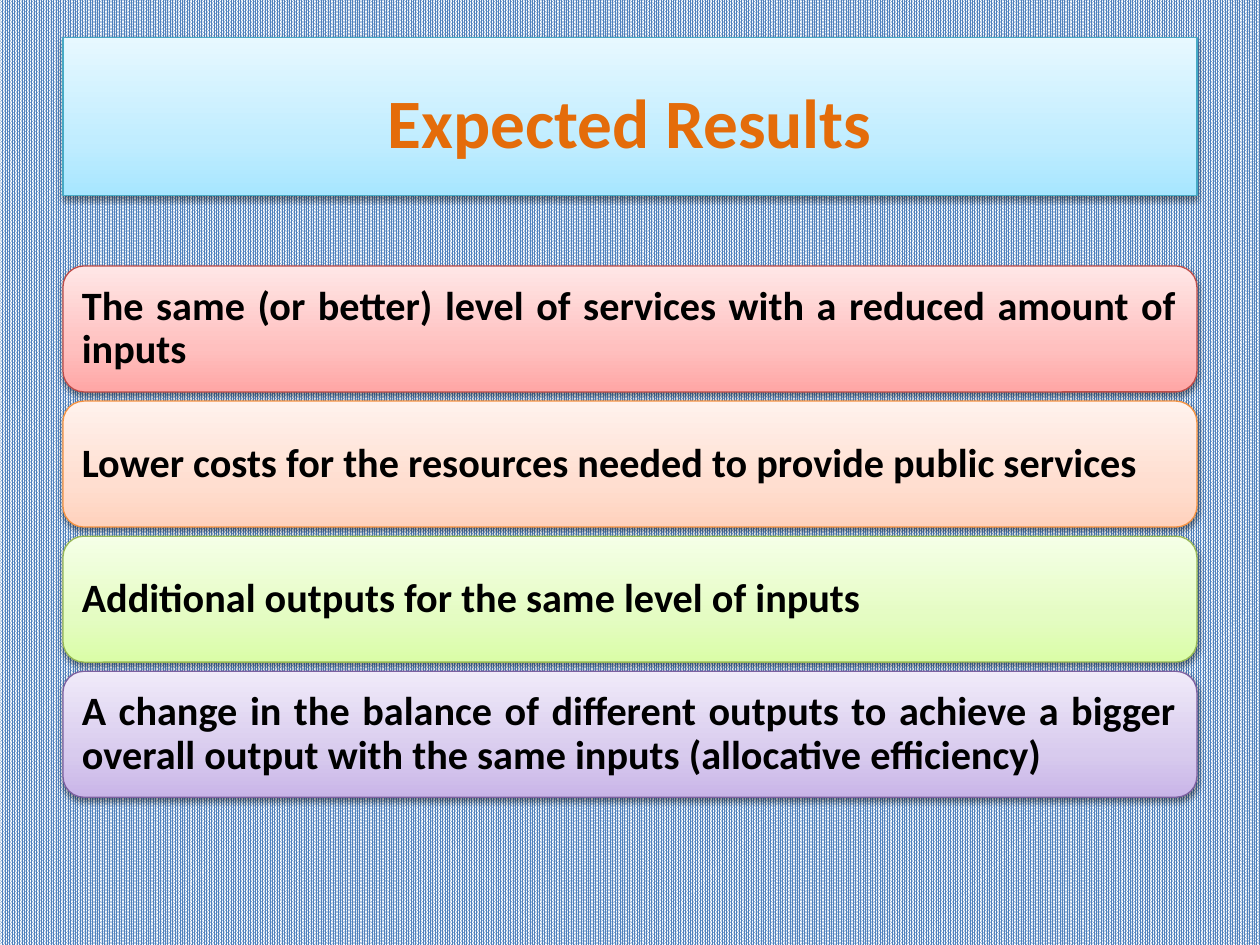
from copy import deepcopy

from lxml import etree
from pptx import Presentation
from pptx.dml.color import RGBColor
from pptx.enum import dml, shapes, text
from pptx.oxml.ns import qn
from pptx.util import Pt

rgb = RGBColor.from_string


def panel(kind, top, height, stops, edge):
    """Add a full-width panel with an upward gradient and a soft shadow."""
    box = slide.shapes.add_shape(kind, Pt(36), Pt(top), Pt(648), Pt(height))
    box.fill.gradient()
    box.fill.gradient_angle = 90
    ramp = box._element.spPr.find(".//" + qn("a:gsLst"))
    ramp.append(deepcopy(ramp[0]))
    for stop, place, color in zip(box.fill.gradient_stops, (0, 0.35, 1), stops):
        stop.position = place
        stop.color.rgb = rgb(color)
    box.line.color.rgb = rgb(edge)
    box.line.width = Pt(0.75)

    box.shadow.inherit = False
    glow = box._element.spPr.find(qn("a:effectLst"))
    drop = etree.SubElement(glow, qn("a:outerShdw"), blurRad=str(Pt(3.1)),
                            dist=str(Pt(1.6)), dir="5400000", rotWithShape="0")
    tint = etree.SubElement(drop, qn("a:srgbClr"), val="000000")
    etree.SubElement(tint, qn("a:alpha"), val="38000")
    return box


def write(box, words, size, color, align):
    frame = box.text_frame
    frame.word_wrap = True
    frame.vertical_anchor = text.MSO_ANCHOR.MIDDLE
    para = frame.paragraphs[0]
    para.alignment = align
    run = para.add_run()
    run.text = words
    run.font.name = "Calibri"
    run.font.size = Pt(size)
    run.font.bold = True
    run.font.color.rgb = rgb(color)
    return frame


deck = Presentation()
deck.slide_width, deck.slide_height = Pt(720), Pt(540)
slide = deck.slides.add_slide(deck.slide_layouts[6])

back = slide.background.fill
back.patterned()
back.pattern = dml.MSO_PATTERN.PERCENT_90
back.fore_color.rgb = rgb("4F81BD")
back.back_color.rgb = rgb("FFFFFF")

title = panel(shapes.MSO_SHAPE.RECTANGLE, 21.6, 90,
              ("A7E6FF", "C1EDFF", "E7F8FF"), "46AAC5")
frame = write(title, "Expected Results", 39.6, "E46C0A", text.PP_ALIGN.CENTER)
frame.margin_top = Pt(8)

results = [
    ("The same (or better) level of services with a reduced amount of inputs",
     ("FFA6A5", "FFC0BF", "FFE7E7"), "BF4C48"),
    ("Lower costs for the resources needed to provide public services",
     ("FFD2BD", "FFDED0", "FFF2ED"), "F69240"),
    ("Additional outputs for the same level of inputs",
     ("DAFDA7", "E4FCC2", "F5FFE7"), "98B955"),
    ("A change in the balance of different outputs to achieve a bigger "
     "overall output with the same inputs (allocative efficiency)",
     ("C9B5E8", "D8CBEE", "F0EAF9"), "7D60A0"),
]
for row, (words, stops, edge) in enumerate(results):
    card = panel(shapes.MSO_SHAPE.ROUNDED_RECTANGLE, 152 + 77.2 * row, 72, stops, edge)
    frame = write(card, words, 23, "000000", text.PP_ALIGN.JUSTIFY)
    # The text area of a rounded rectangle already sits about 3.5 pt inside its edge.
    frame.margin_left = frame.margin_right = Pt(7.3)
    frame.paragraphs[0].line_spacing = 0.9

deck.save("out.pptx")
